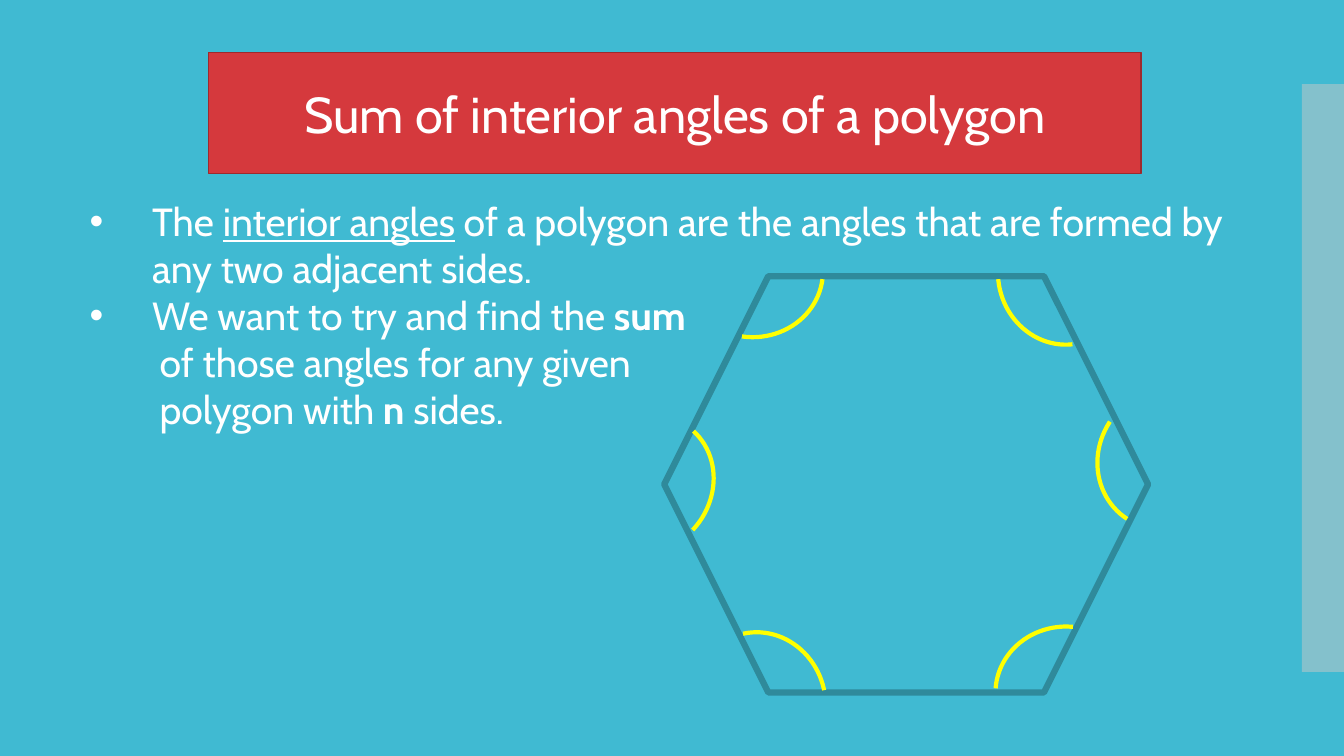
from pptx import Presentation
from pptx.dml.color import RGBColor
from pptx.enum.shapes import MSO_SHAPE
from pptx.enum.text import MSO_ANCHOR, MSO_AUTO_SIZE, PP_ALIGN
from pptx.oxml.ns import qn
from pptx.util import Pt
from lxml.etree import SubElement

COLOURS = {
    "background": "40BAD2",
    "banner": "D5393D",
    "banner_line": "9E2A2D",
    "sidebar": "C8C8C8",
    "hexagon_line": "2F8A9B",
    "angle": "FFFF00",
    "text": "FFFFFF",
}
TITLE = "Sum of interior angles of a polygon"
HANGING = 44.64
CONTINUATION = 50

# Each paragraph: whether it has a bullet, then its spans as (text, style)
EXPLANATION = [
    (True, [("The ", ""), ("interior angles", "underline"),
            (" of a polygon are the angles that are formed by any two adjacent sides.", "")]),
    (True, [("We want to try and find the ", ""), ("sum", "bold")]),
    (False, [("of those angles for any given", "")]),
    (False, [("polygon with ", ""), ("n", "bold"), (" sides.", "")]),
]

# Left, top, width, height and rotation of the arc at each corner
ANGLES = [
    (413.28, 294.48, 94.32, 103.68, 42.4),
    (493.92, 451.44, 95.76, 102.24, 347.6),
    (488.88, 141.84, 95.76, 102.24, 97.3),
    (712.8, 144, 95.76, 102.24, 174),
    (784.8, 276.48, 95.76, 102.24, 212.7),
    (714.24, 444.24, 95.76, 102.24, 274.2),
]


class PageBuilder:
    font = "Cabin"

    def __init__(self, deck):
        self.page = deck.slides.add_slide(deck.slide_layouts[5])
        background = self.page.background.fill
        background.solid()
        background.fore_color.rgb = self.colour("background")

    def colour(self, name):
        return RGBColor.from_string(COLOURS[name])

    def paint(self, shape, fill=None, line=None, weight=0):
        if fill:
            shape.fill.solid()
            shape.fill.fore_color.rgb = self.colour(fill)
        else:
            shape.fill.background()
        if line:
            shape.line.color.rgb = self.colour(line)
            shape.line.width = Pt(weight)
        else:
            shape.line.fill.background()

    def style(self, span, size, emphasis=""):
        span.font.name = self.font
        span.font.size = Pt(size)
        span.font.color.rgb = self.colour("text")
        span.font.bold = emphasis == "bold"
        span.font.underline = emphasis == "underline"

    def title(self, text, left, top, width, height):
        box = self.page.shapes.title
        box.left, box.top, box.width, box.height = map(Pt, (left, top, width, height))
        self.paint(box, "banner", "banner_line", 0.85)
        frame = box.text_frame
        frame.text = text
        frame.vertical_anchor = MSO_ANCHOR.MIDDLE
        frame.auto_size = MSO_AUTO_SIZE.NONE
        para = frame.paragraphs[0]
        para.alignment = PP_ALIGN.CENTER
        self.style(para.runs[0], 36)

    def shape(self, kind, left, top, width, height, **paint):
        shape = self.page.shapes.add_shape(kind, *map(Pt, (left, top, width, height)))
        shape.shadow.inherit = False
        self.paint(shape, **paint)
        return shape

    def sidebar(self, left, top, width, height):
        bar = self.shape(MSO_SHAPE.RECTANGLE, left, top, width, height, fill="sidebar")
        colour = next(bar.fill._xPr.iter(qn("a:srgbClr")))
        SubElement(colour, qn("a:alpha"), val="50000")

    def angle(self, left, top, width, height, rotation):
        arc = self.shape(MSO_SHAPE.ARC, left, top, width, height, line="angle", weight=3)
        arc.adjustments[0] = 162
        arc.adjustments[1] = 0.489
        arc.rotation = rotation

    def text(self, paragraphs, left, top, width, height):
        box = self.page.shapes.add_textbox(*map(Pt, (left, top, width, height)))
        frame = box.text_frame
        frame.word_wrap = True
        for index, (bulleted, spans) in enumerate(paragraphs):
            para = frame.paragraphs[0] if index == 0 else frame.add_paragraph()
            self.indent(para, bulleted)
            for words, emphasis in spans:
                span = para.add_run()
                span.text = words
                self.style(span, 28, emphasis)

    def indent(self, para, bulleted):
        properties = para._p.get_or_add_pPr()
        properties.set("marL", str(Pt(HANGING if bulleted else CONTINUATION)))
        properties.set("indent", str(Pt(-HANGING if bulleted else 0)))
        if bulleted:
            SubElement(properties, qn("a:buFont"), typeface="Arial")
            SubElement(properties, qn("a:buChar"), char="•")
        else:
            SubElement(properties, qn("a:buNone"))


def main():
    deck = Presentation()
    deck.slide_width, deck.slide_height = Pt(960), Pt(540)
    builder = PageBuilder(deck)

    # Frame and title
    builder.sidebar(930, 60, 30, 420)
    builder.title(TITLE, 149.04, 37.44, 666, 86.4)

    # Explanation
    builder.text(EXPLANATION, 56.88, 137.52, 851.04, 177.12)

    # Hexagon with its interior angles
    builder.shape(MSO_SHAPE.HEXAGON, 474.48, 197.28, 345.6, 297.36,
                  fill="background", line="hexagon_line", weight=4.5)
    for angle in ANGLES:
        builder.angle(*angle)

    deck.save("out.pptx")


if __name__ == "__main__":
    main()
